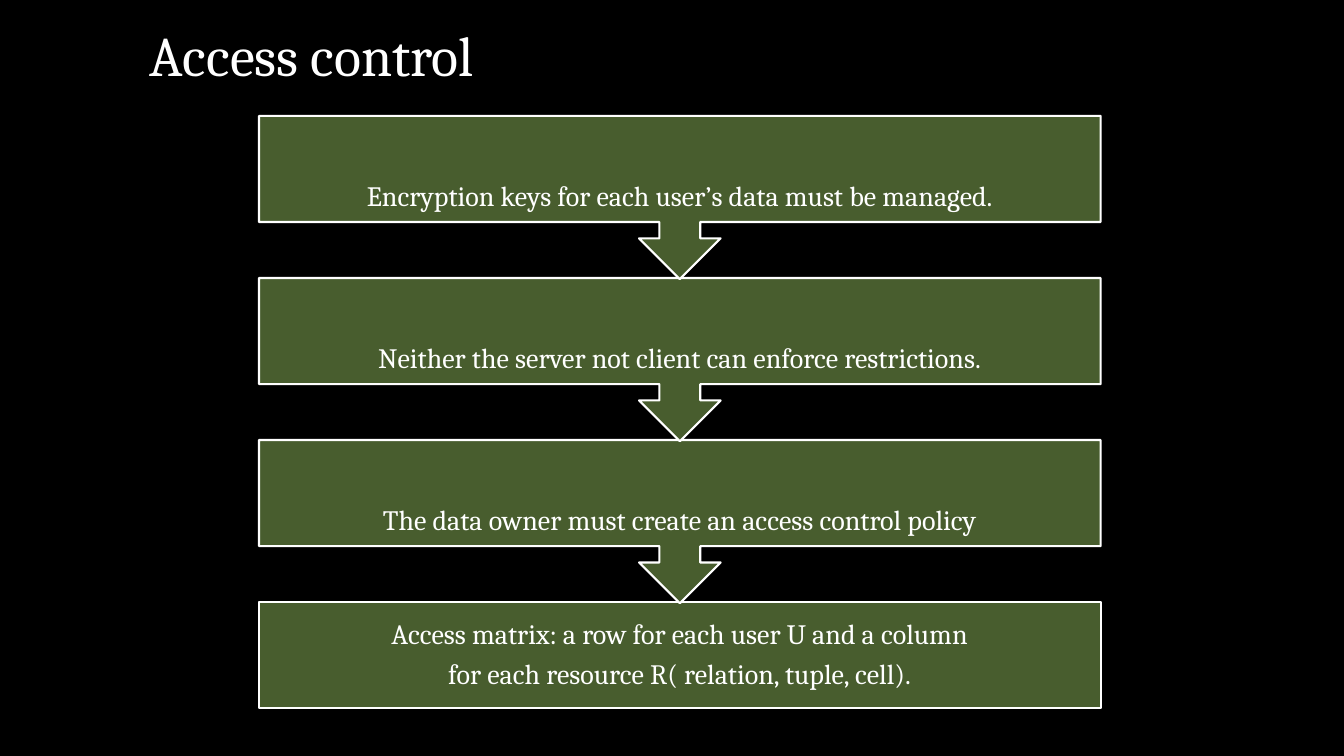
from dataclasses import dataclass

from pptx import Presentation
from pptx.dml.color import RGBColor as RGB
from pptx.enum.shapes import MSO_SHAPE as Kind
from pptx.enum.text import MSO_ANCHOR as Anchor, PP_ALIGN as Align
from pptx.util import Pt


@dataclass(frozen=True)
class Theme:
    back: RGB = RGB(0x00, 0x00, 0x00)
    box: RGB = RGB(0x48, 0x5D, 0x2E)
    ink: RGB = RGB(0xFF, 0xFF, 0xFF)
    font: str = "Cambria"
    title: int = 40
    body: int = 20
    line: float = 1.5


THEME = Theme()

# Flow layout, in points
LEFT, TOP, WIDTH = 185, 82.8, 601.2
PITCH, TALL, SHORT = 115.75, 116.6, 75.8
INSET = 11.2

STEPS = [
    "Encryption keys for each user’s data must be managed.",
    "Neither the server not client can enforce restrictions.",
    "The data owner must create an access control policy",
    "Access matrix: a row for each user U and a column\n"
    "for each resource R( relation, tuple, cell).",
]


def add_text(slide, text, area, size, anchor, align, space, after=0, inset=None):
    frame = slide.shapes.add_textbox(*map(Pt, area)).text_frame
    frame.word_wrap = True
    frame.vertical_anchor = anchor
    if inset is not None:
        frame.margin_left = frame.margin_right = Pt(inset)
        frame.margin_top = frame.margin_bottom = Pt(inset)
    frame.text = text
    for para in frame.paragraphs:
        para.alignment = align
        para.line_spacing = space
        para.space_after = Pt(after)
        for run in para.runs:
            run.font.name = THEME.font
            run.font.size = Pt(size)
            run.font.color.rgb = THEME.ink


def add_box(slide, kind, area, turn):
    shape = slide.shapes.add_shape(kind, *map(Pt, area))
    shape.rotation = turn
    shape.shadow.inherit = False
    shape.fill.solid()
    shape.fill.fore_color.rgb = THEME.box
    shape.line.color.rgb = THEME.ink
    shape.line.width = Pt(THEME.line)


def add_step(slide, index, text):
    last = index == len(STEPS) - 1
    area = (LEFT, TOP + index * PITCH, WIDTH, SHORT if last else TALL)
    if last:
        add_box(slide, Kind.RECTANGLE, area, 0)
    else:
        add_box(slide, Kind.UP_ARROW_CALLOUT, area, 180)
    add_text(slide, text, area, THEME.body, Anchor.MIDDLE, Align.CENTER,
             0.9, after=7, inset=INSET)


def main():
    deck = Presentation()
    deck.slide_width, deck.slide_height = Pt(960), Pt(540)
    slide = deck.slides.add_slide(deck.slide_layouts[6])

    # Background
    fill = slide.background.fill
    fill.solid()
    fill.fore_color.rgb = THEME.back

    # Title
    add_text(slide, "Access control", (100, -24.5, 756, 90), THEME.title,
             Anchor.BOTTOM, Align.LEFT, 0.8)

    # Steps, from the bottom up so that each arrow tip lies on top
    for index, text in reversed(list(enumerate(STEPS))):
        add_step(slide, index, text)

    deck.save("out.pptx")


if __name__ == "__main__":
    main()
